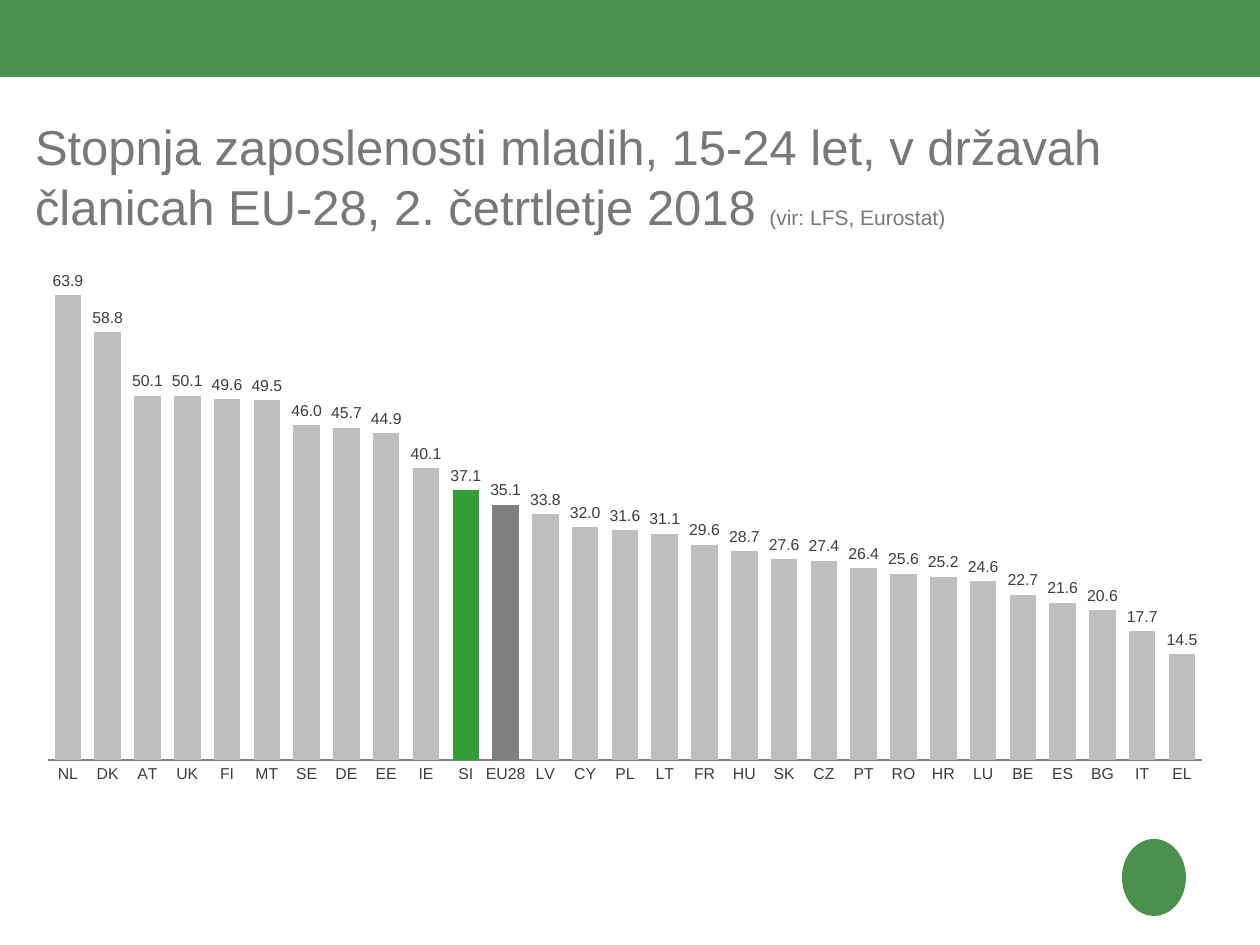
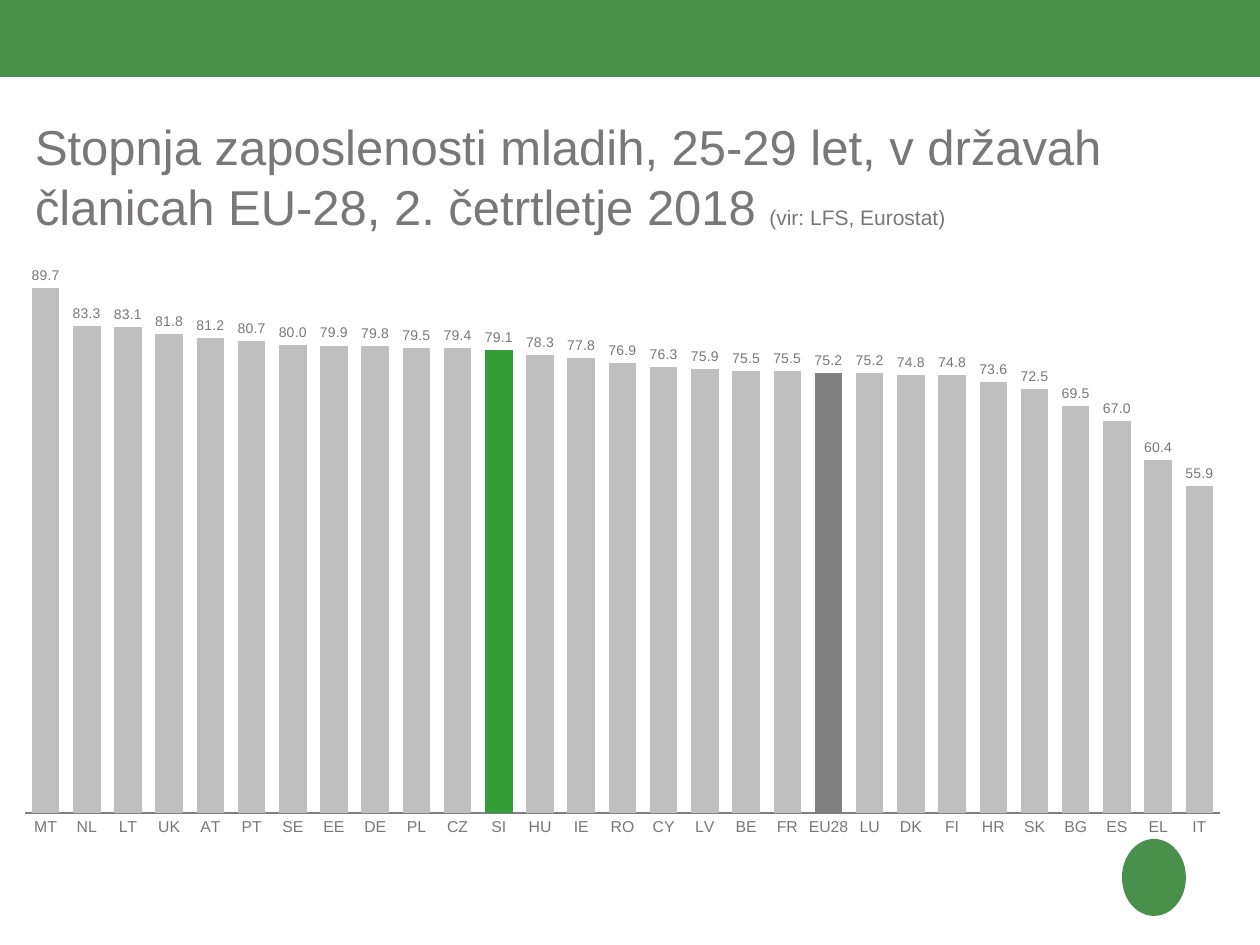
from lxml import etree
from pptx import Presentation
from pptx.chart.data import CategoryChartData
from pptx.dml.color import RGBColor
from pptx.enum.chart import XL_CHART_TYPE as ChartType, XL_LABEL_POSITION as LabelPosition
from pptx.enum.chart import XL_TICK_LABEL_POSITION as TickLabels, XL_TICK_MARK as TickMark
from pptx.enum.shapes import MSO_SHAPE as Preset
from pptx.enum.text import MSO_ANCHOR as Anchor, PP_ALIGN as Align
from pptx.oxml.ns import qn
from pptx.util import Emu, Pt

PX_PER_INCH = 126
FONT = "Arial"
BRAND_GREEN = "49904D"
TEXT_GREY = "797777"
LABEL_DARK = "3C3C3C"
BAR_GREY = "BFBFBF"
AXIS_GREY = "808080"
HIGHLIGHTS = {"SI": "339E35", "EU28": "808080"}
NUMBER_FORMAT = "#,##0.0"
TITLE = "Stopnja zaposlenosti mladih, {} let, v državah članicah EU-28, 2. četrtletje 2018 "
SOURCE = "(vir: LFS, Eurostat)"

# Boxes are left, top, width, height in px; plot boxes are relative to the chart
SLIDES = [
    {
        "ages": "15-24",
        "box": (35, 244, 1181, 586),
        "plot": (13, 7, 1154, 509),
        "maximum": 70,
        "label_size": 9,
        "label_color": LABEL_DARK,
        "rates": {
            "NL": 63.9, "DK": 58.8, "AT": 50.1, "UK": 50.1, "FI": 49.6, "MT": 49.5,
            "SE": 46.0, "DE": 45.7, "EE": 44.9, "IE": 40.1, "SI": 37.1, "EU28": 35.1,
            "LV": 33.8, "CY": 32.0, "PL": 31.6, "LT": 31.1, "FR": 29.6, "HU": 28.7,
            "SK": 27.6, "CZ": 27.4, "PT": 26.4, "RO": 25.6, "HR": 25.2, "LU": 24.6,
            "BE": 22.7, "ES": 21.6, "BG": 20.6, "IT": 17.7, "EL": 14.5,
        },
    },
    {
        "ages": "25-29",
        "box": (0, 214, 1245, 635),
        "plot": (25, 14, 1195, 585),
        "maximum": 100,
        "label_size": 8,
        "label_color": TEXT_GREY,
        "rates": {
            "MT": 89.7, "NL": 83.3, "LT": 83.1, "UK": 81.8, "AT": 81.2, "PT": 80.7,
            "SE": 80.0, "EE": 79.9, "DE": 79.8, "PL": 79.5, "CZ": 79.4, "SI": 79.1,
            "HU": 78.3, "IE": 77.8, "RO": 76.9, "CY": 76.3, "LV": 75.9, "BE": 75.5,
            "FR": 75.5, "EU28": 75.2, "LU": 75.2, "DK": 74.8, "FI": 74.8, "HR": 73.6,
            "SK": 72.5, "BG": 69.5, "ES": 67.0, "EL": 60.4, "IT": 55.9,
        },
    },
]


def px(length):
    return Emu(round(length * 914400 / PX_PER_INCH))


def place(box):
    return [px(length) for length in box]


def color(value):
    return RGBColor.from_string(value)


def style_font(font, size, value):
    font.name = FONT
    font.size = Pt(size)
    font.color.rgb = color(value)


def fill_solid(part, value):
    part.fill.solid()
    part.fill.fore_color.rgb = color(value)


def add_plain_shape(slide, preset, box):
    shape = slide.shapes.add_shape(preset, *place(box))
    shape.shadow.inherit = False
    fill_solid(shape, BRAND_GREEN)
    shape.line.fill.background()


def add_frame(slide):
    # Top band and the plain mark in the bottom corner
    add_plain_shape(slide, Preset.RECTANGLE, (0, -1, 1260, 78))
    add_plain_shape(slide, Preset.OVAL, (1122, 839, 64, 77))


def add_title(slide, box, ages):
    text_frame = slide.shapes.add_textbox(*place(box)).text_frame
    text_frame.word_wrap = True
    text_frame.vertical_anchor = Anchor.TOP
    text_frame.margin_left = text_frame.margin_right = 0
    text_frame.margin_top = text_frame.margin_bottom = 0
    paragraph = text_frame.paragraphs[0]
    paragraph.alignment = Align.LEFT
    paragraph.line_spacing = Pt(34)
    for text, size in ((TITLE.format(ages), 28), (SOURCE, 12)):
        run = paragraph.add_run()
        run.text = text
        style_font(run.font, size, TEXT_GREY)


def set_plot_layout(chart, box, plot):
    # Fix the inner plot area as fractions of the chart box
    plot_area = chart._chartSpace.find(".//" + qn("c:plotArea"))
    for old_layout in plot_area.findall(qn("c:layout")):
        plot_area.remove(old_layout)
    layout = etree.Element(qn("c:layout"))
    plot_area.insert(0, layout)
    manual = etree.SubElement(layout, qn("c:manualLayout"))
    left, top, width, height = plot
    settings = {
        "layoutTarget": "inner", "xMode": "edge", "yMode": "edge",
        "x": left / box[2], "y": top / box[3],
        "w": width / box[2], "h": height / box[3],
    }
    for name, value in settings.items():
        etree.SubElement(manual, qn("c:" + name)).set("val", str(value))


def style_axes(chart, maximum, label_color):
    countries = chart.category_axis
    countries.major_tick_mark = countries.minor_tick_mark = TickMark.NONE
    countries.format.line.color.rgb = color(AXIS_GREY)
    countries.format.line.width = Pt(1.5)
    style_font(countries.tick_labels.font, 9, label_color)

    rates = chart.value_axis
    rates.minimum_scale, rates.maximum_scale = 0, maximum
    rates.has_major_gridlines = False
    rates.major_tick_mark = rates.minor_tick_mark = TickMark.NONE
    rates.tick_label_position = TickLabels.NONE
    rates.format.line.fill.background()


def style_bars(chart, countries, label_size, label_color):
    bars = chart.plots[0]
    bars.gap_width = 50
    bars.vary_by_categories = False
    series = bars.series[0]
    fill_solid(series.format, BAR_GREY)
    for country, value in HIGHLIGHTS.items():
        fill_solid(series.points[countries.index(country)].format, value)

    labels = series.data_labels
    labels.show_value = True
    labels.position = LabelPosition.OUTSIDE_END
    labels.number_format = NUMBER_FORMAT
    labels.number_format_is_linked = False
    style_font(labels.font, label_size, label_color)


def add_rate_chart(slide, box, plot, maximum, rates, label_size, label_color):
    data = CategoryChartData(number_format=NUMBER_FORMAT)
    data.categories = list(rates)
    data.add_series("Series 1", list(rates.values()))
    chart = slide.shapes.add_chart(ChartType.COLUMN_CLUSTERED, *place(box), data).chart
    chart.has_legend = False
    chart.has_title = False
    style_font(chart.font, 10, TEXT_GREY)
    set_plot_layout(chart, box, plot)
    style_axes(chart, maximum, label_color)
    style_bars(chart, list(rates), label_size, label_color)


def add_rate_slide(presentation, ages, **chart_settings):
    slide = presentation.slides.add_slide(presentation.slide_layouts[6])
    add_frame(slide)
    add_title(slide, (35, 116, 1167, 89), ages)
    add_rate_chart(slide, **chart_settings)


def main():
    presentation = Presentation()
    presentation.slide_width, presentation.slide_height = px(1260), px(945)
    for settings in SLIDES:
        add_rate_slide(presentation, **settings)
    presentation.save("out.pptx")


if __name__ == "__main__":
    main()
